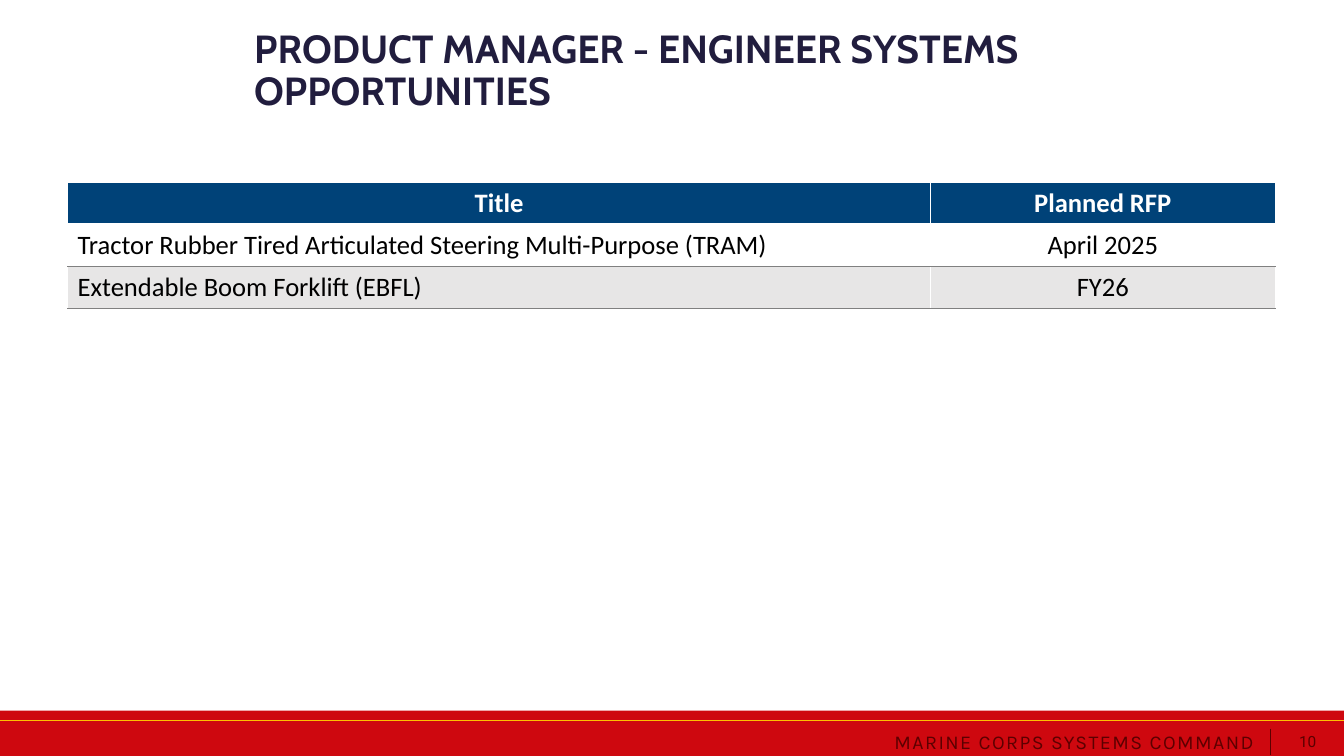
from dataclasses import dataclass

from lxml.etree import SubElement
from pptx import Presentation
from pptx.dml.color import RGBColor as Rgb
from pptx.enum.shapes import MSO_CONNECTOR as Connector, MSO_SHAPE as Shape
from pptx.enum.text import MSO_ANCHOR as Anchor, PP_ALIGN as Align
from pptx.oxml.ns import qn
from pptx.util import Pt

TITLE = ("PRODUCT MANAGER - ENGINEER SYSTEMS", "OPPORTUNITIES")
OPPORTUNITIES = [
    ("Title", "Planned RFP"),
    ("Tractor Rubber Tired Articulated Steering Multi-Purpose (TRAM)", "April 2025"),
    ("Extendable Boom Forklift (EBFL)", "FY26"),
    ("", ""),
]
COMMAND = "MARINE CORPS SYSTEMS COMMAND"
PAGE_NUMBER = "10"


@dataclass(frozen=True)
class Theme:
    red: str = "CE080F"
    gold: str = "FFC000"
    maroon: str = "5C0000"
    navy: str = "211D3E"
    blue: str = "004278"
    stripe: str = "E7E6E6"
    rule: str = "808080"
    white: str = "FFFFFF"
    black: str = "000000"
    title_size: float = 28
    table_size: float = 19
    command_size: float = 14
    number_size: float = 11


THEME = Theme()
PAGE_WIDTH, PAGE_HEIGHT = 960, 540
BAND_TOP = 507.6
COLUMN_WIDTHS = (616.3, 246.25)
ROW_HEIGHTS = (29.2, 29.2, 29.2, 14.4)


def add_span(para, text, font, size, color, bold=False):
    span = para.add_run()
    span.text = text
    span.font.name, span.font.size, span.font.bold = font, Pt(size), bold
    span.font.color.rgb = Rgb.from_string(color)
    return span


def add_box(page, left, top, width, height, anchor, inset=(0, 0)):
    """Add a text box and return its first paragraph; inset is (sides, ends)."""
    box = page.shapes.add_textbox(Pt(left), Pt(top), Pt(width), Pt(height))
    frame = box.text_frame
    frame.word_wrap, frame.vertical_anchor = True, anchor
    frame.margin_left = frame.margin_right = Pt(inset[0])
    frame.margin_top = frame.margin_bottom = Pt(inset[1])
    return frame.paragraphs[0]


def add_line(page, start, end, color, weight):
    line = page.shapes.add_connector(Connector.STRAIGHT, *map(Pt, start + end))
    line.line.color.rgb = Rgb.from_string(color)
    line.line.width = Pt(weight)
    SubElement(line._element.spPr, qn("a:effectLst"))


def set_borders(cell, borders):
    """Draw cell edges; borders maps L, R, T, B to (colour, weight), in that order."""
    props = cell._tc.get_or_add_tcPr()
    for index, (side, (color, weight)) in enumerate(borders.items()):
        edge = props.makeelement(qn(f"a:ln{side}"), {"w": str(Pt(weight))})
        fill = SubElement(edge, qn("a:solidFill"))
        SubElement(fill, qn("a:srgbClr"), val=color)
        props.insert(index, edge)


def add_footer(page):
    band = page.shapes.add_shape(
        Shape.RECTANGLE, 0, Pt(BAND_TOP), Pt(PAGE_WIDTH), Pt(PAGE_HEIGHT - BAND_TOP))
    band.shadow.inherit = False
    band.fill.solid()
    band.fill.fore_color.rgb = Rgb.from_string(THEME.red)
    band.line.fill.background()
    add_line(page, (0, 514.8), (PAGE_WIDTH, 514.8), THEME.gold, 0.5)
    add_line(page, (907.5, 520.5), (907.5, 539.3), THEME.maroon, 0.25)

    number = add_box(page, 911.5, 524.9, 28.8, 10.8, Anchor.MIDDLE)
    number.alignment, number.line_spacing = Align.RIGHT, 0.9
    add_span(number, PAGE_NUMBER, "Roboto", THEME.number_size, THEME.maroon)

    command = add_box(page, 489.6, 517.7, 413.3, 24.5, Anchor.TOP, (7.2, 3.6))
    command.alignment = Align.RIGHT
    span = add_span(command, COMMAND, "Karla", THEME.command_size, THEME.maroon)
    span.font._element.set("spc", "100")


def add_title(page):
    para = add_box(page, 181.6, 20.9, 730, 28.1, Anchor.TOP)
    para.line_spacing = 0.9
    for index, text in enumerate(TITLE):
        if index:
            para.add_line_break()
        add_span(para, text, "Cabin", THEME.title_size, THEME.navy, True)


def add_opportunities(page):
    table = page.shapes.add_table(
        len(OPPORTUNITIES), len(COLUMN_WIDTHS), Pt(48.3), Pt(130.3),
        Pt(sum(COLUMN_WIDTHS)), Pt(sum(ROW_HEIGHTS))).table
    for column, width in zip(table.columns, COLUMN_WIDTHS):
        column.width = Pt(width)

    white, rule = (THEME.white, 1), (THEME.rule, 0.5)
    fills = (THEME.blue, THEME.white, THEME.stripe, THEME.white)
    edges = (white, (THEME.white, 3), rule, rule, white)
    for r, texts in enumerate(OPPORTUNITIES):
        table.rows[r].height = Pt(ROW_HEIGHTS[r])
        header = r == 0
        for c, text in enumerate(texts):
            cell = table.cell(r, c)
            cell.vertical_anchor = Anchor.MIDDLE
            cell.fill.solid()
            cell.fill.fore_color.rgb = Rgb.from_string(fills[r])
            set_borders(cell, {"L": white, "R": white, "T": edges[r], "B": edges[r + 1]})
            para = cell.text_frame.paragraphs[0]
            para.alignment = Align.CENTER if header or c else Align.LEFT
            if text:
                add_span(para, text, "Calibri", THEME.table_size,
                         THEME.white if header else THEME.black, header)


def main():
    deck = Presentation()
    deck.slide_width, deck.slide_height = Pt(PAGE_WIDTH), Pt(PAGE_HEIGHT)
    page = deck.slides.add_slide(deck.slide_layouts[6])
    add_footer(page)
    add_title(page)
    add_opportunities(page)
    deck.save("out.pptx")


if __name__ == "__main__":
    main()
